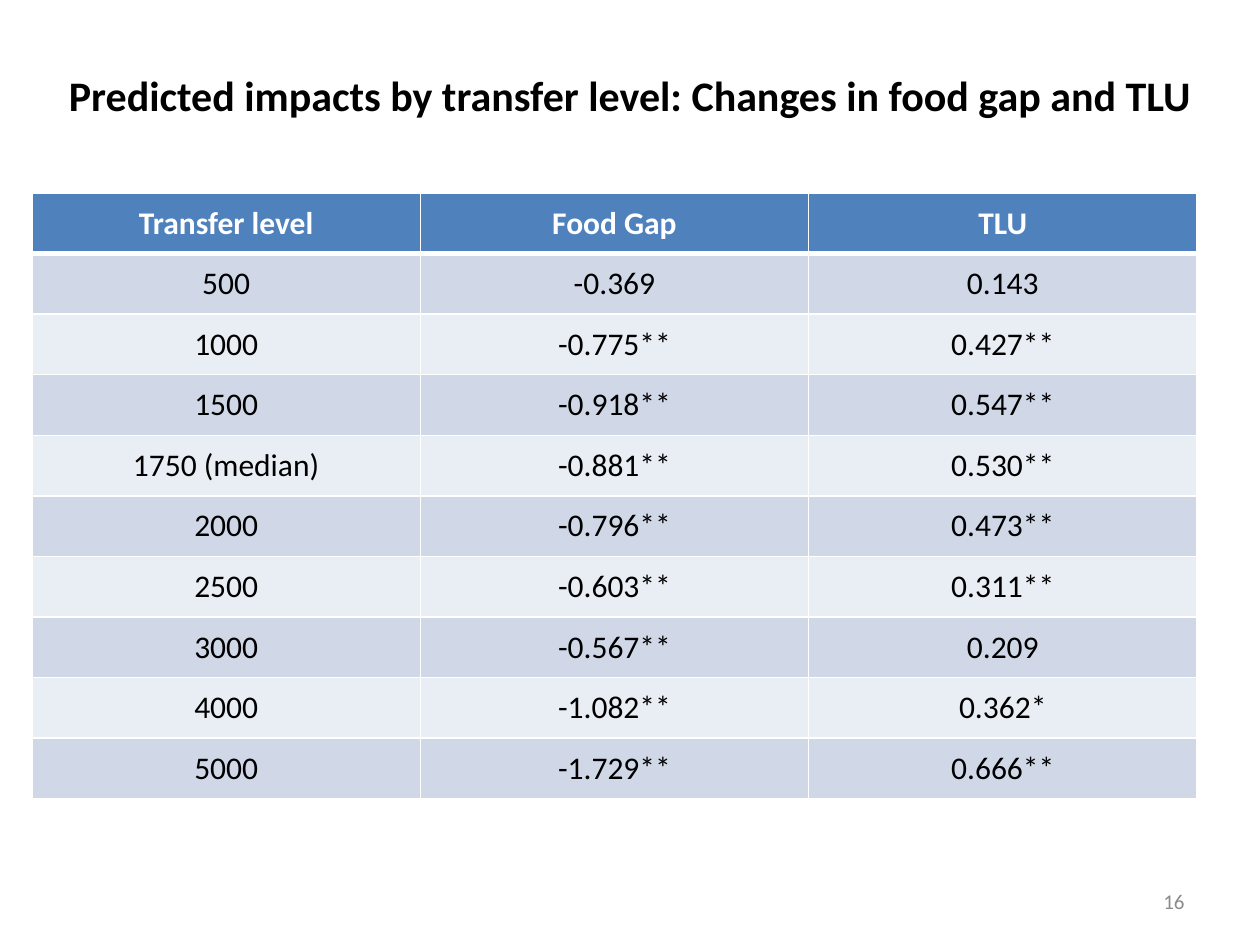
from lxml.etree import SubElement
from pptx import Presentation
from pptx.dml.color import RGBColor
from pptx.enum.text import MSO_ANCHOR as Anchor, PP_ALIGN as Align
from pptx.oxml.ns import qn
from pptx.util import Emu, Pt

TITLE = "Predicted impacts by transfer level: Changes in food gap and TLU"
PAGE_NUMBER = "16"
ROWS = [
    ("Transfer level", "Food Gap", "TLU"),
    ("500", "-0.369", "0.143"),
    ("1000", "-0.775**", "0.427**"),
    ("1500", "-0.918**", "0.547**"),
    ("1750 (median)", "-0.881**", "0.530**"),
    ("2000", "-0.796**", "0.473**"),
    ("2500", "-0.603**", "0.311**"),
    ("3000", "-0.567**", "0.209"),
    ("4000", "-1.082**", "0.362*"),
    ("5000", "-1.729**", "0.666**"),
]
COLORS = {
    "text": "000000",
    "number": "8C8C8C",
    "white": "FFFFFF",
    "header": "4F81BD",
    "odd": "D0D8E8",
    "even": "E9EDF4",
}
FONT = "Calibri"
SLIDE_SIZE = (1260, 945)
TABLE_AREA = (32, 193, 1165, 606)
TITLE_AREA = (42, 63, 1176, 63)
NUMBER_AREA = (903, 876, 294, 50)


def px(length):
    return Emu(round(length * 914400 / 126))


def color(name):
    return RGBColor.from_string(COLORS[name])


def style(para, size, name, bold=False, align=Align.CENTER):
    para.alignment = align
    para.font.name = FONT
    para.font.size = Pt(size)
    para.font.bold = bold
    para.font.color.rgb = color(name)


def add_text(page, area, text, anchor, **look):
    frame = page.shapes.add_textbox(*map(px, area)).text_frame
    frame.word_wrap = True
    frame.vertical_anchor = anchor
    para = frame.paragraphs[0]
    para.text = text
    style(para, **look)


def add_borders(cell, bottom):
    props = cell._tc.get_or_add_tcPr()
    widths = {"lnL": 1, "lnR": 1, "lnT": 1, "lnB": bottom}
    for position, (side, width) in enumerate(widths.items()):
        line = SubElement(props, qn(f"a:{side}"), w=str(Pt(width)))
        fill = SubElement(line, qn("a:solidFill"))
        SubElement(fill, qn("a:srgbClr"), val=COLORS["white"])
        props.insert(position, line)


def add_impacts(page):
    left, top, width, height = map(px, TABLE_AREA)
    table = page.shapes.add_table(len(ROWS), len(ROWS[0]), left, top, width, height).table
    for row_index, values in enumerate(ROWS):
        is_header = row_index == 0
        fill = "header" if is_header else "odd" if row_index % 2 else "even"
        for column_index, value in enumerate(values):
            cell = table.cell(row_index, column_index)
            cell.text = value
            cell.vertical_anchor = Anchor.MIDDLE
            cell.margin_left = cell.margin_right = px(9)
            cell.margin_top = cell.margin_bottom = 0
            cell.fill.solid()
            cell.fill.fore_color.rgb = color(fill)
            style(cell.text_frame.paragraphs[0], 18, "white" if is_header else "text", is_header)
            add_borders(cell, 3 if is_header else 1)
        if row_index == 1:
            for cell in table.rows[1].cells:
                cell._tc.tcPr.find(qn("a:lnT")).set("w", str(Pt(3)))


def main():
    deck = Presentation()
    deck.slide_width, deck.slide_height = map(px, SLIDE_SIZE)
    page = deck.slides.add_slide(deck.slide_layouts[6])
    add_impacts(page)
    add_text(page, TITLE_AREA, TITLE, Anchor.TOP, size=24, name="text", bold=True)
    add_text(page, NUMBER_AREA, PAGE_NUMBER, Anchor.MIDDLE, size=12, name="number", align=Align.RIGHT)
    deck.save("out.pptx")


if __name__ == "__main__":
    main()
